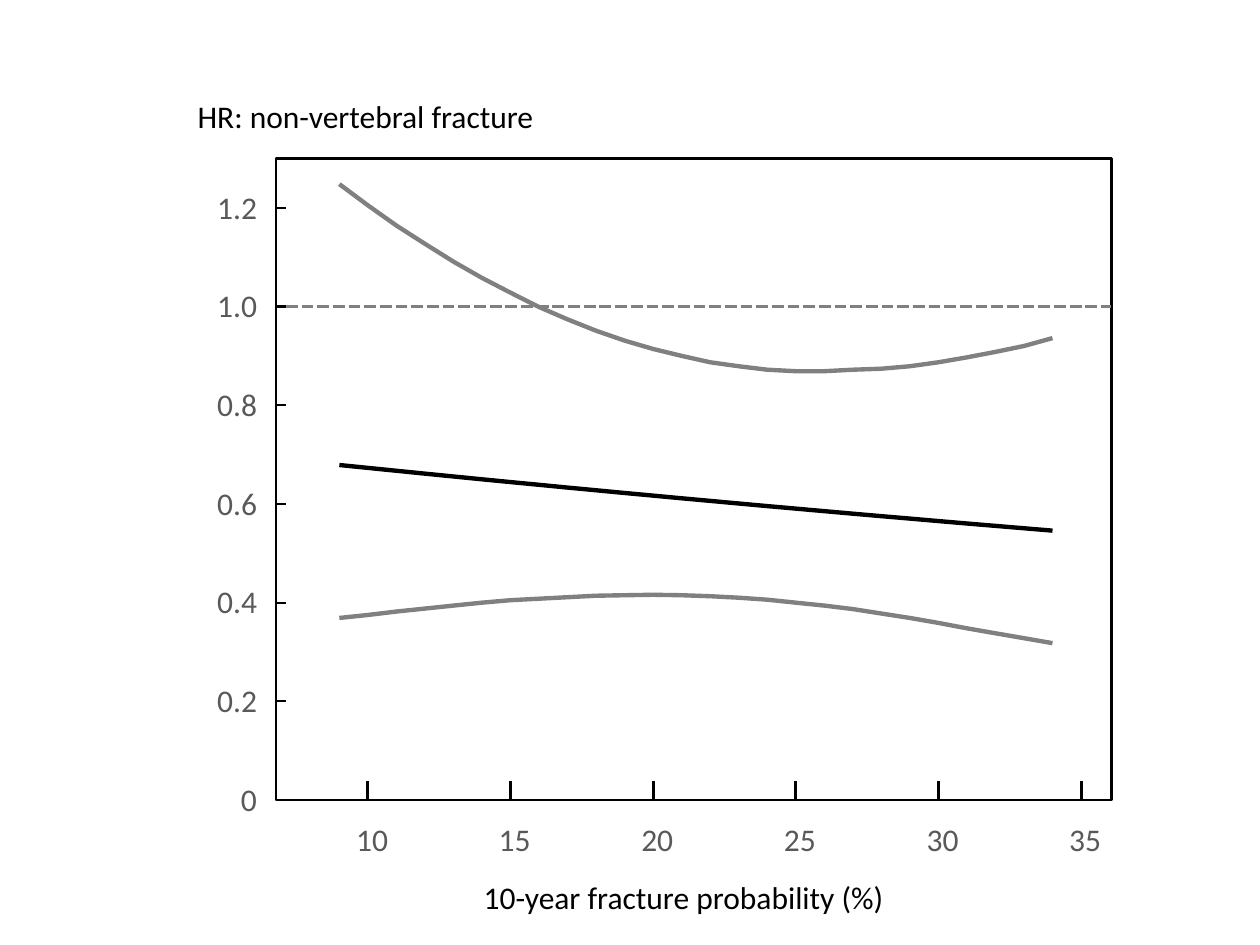
import pptx
import pptx.dml.color
import pptx.enum.dml
import pptx.enum.shapes
import pptx.enum.text
import pptx.oxml.ns
import pptx.util
from lxml import etree
from pptx.util import Inches

ALIGN = pptx.enum.text.PP_ALIGN
INK = {"black": "000000", "gray": "808080", "label": "595959"}
FONT = "Calibri"

# Hazard ratio in percent for each probability from 9 to 34
FIRST, LAST = 9, 34
UPPER = [124.8, 120.5, 116.4, 112.7, 109.1, 105.8, 102.8, 99.9, 97.4,
         95.1, 93.1, 91.4, 90.0, 88.7, 87.9, 87.2, 86.9, 86.9, 87.2,
         87.4, 87.9, 88.7, 89.7, 90.8, 92.0, 93.6]
LOWER = [36.9, 37.5, 38.2, 38.8, 39.4, 40.0, 40.5, 40.8, 41.1,
         41.4, 41.5, 41.6, 41.5, 41.3, 41.0, 40.6, 40.0, 39.4, 38.7,
         37.8, 36.9, 35.9, 34.8, 33.8, 32.8, 31.8]
START, END = 67.9, 54.6
SPAN = LAST - FIRST
# The middle estimate is linear on the log scale
MIDDLE = [START * (END / START) ** (i / SPAN) for i in range(SPAN + 1)]


def rgb(name):
    return pptx.dml.color.RGBColor.from_string(INK[name])


def pen(shape, ink, width):
    shape.line.color.rgb = rgb(ink)
    shape.line.width = pptx.util.Pt(width)


def rule(slide, x1, y1, x2, y2, ink, width):
    line = slide.shapes.add_connector(
        pptx.enum.shapes.MSO_CONNECTOR.STRAIGHT,
        Inches(x1), Inches(y1), Inches(x2), Inches(y2))
    pen(line, ink, width)
    etree.SubElement(line._element.spPr, pptx.oxml.ns.qn("a:effectLst"))
    return line


def write(slide, text, box, ink, align=ALIGN.LEFT, inset=True):
    shape = slide.shapes.add_textbox(*map(Inches, box))
    frame = shape.text_frame
    frame.word_wrap = False
    frame.auto_size = pptx.enum.text.MSO_AUTO_SIZE.SHAPE_TO_FIT_TEXT
    if not inset:
        frame.margin_left = frame.margin_right = 0
        frame.margin_top = frame.margin_bottom = 0
    frame.text = text
    para = frame.paragraphs[0]
    para.alignment = align
    font = para.runs[0].font
    font.name, font.size = FONT, pptx.util.Pt(18)
    font.color.rgb = rgb(ink)


def curve(slide, points, ink):
    spots = [(Inches(x), Inches(y)) for x, y in points]
    pen_path = slide.shapes.build_freeform(*spots[0])
    pen_path.add_line_segments(spots[1:], close=False)
    shape = pen_path.convert_to_shape()
    shape.fill.background()
    shape.shadow.inherit = False
    pen(shape, ink, 2.5)


def plot(slide, left, top, width, height):
    right, base = left + width, top + height

    def across(prob):
        return left + 0.73 + (prob - 10) * 1.132 / 5

    def up(ratio):
        return base - ratio * 3.917

    # Frame
    frame = slide.shapes.add_shape(
        pptx.enum.shapes.MSO_SHAPE.RECTANGLE,
        *map(Inches, (left, top, width, height)))
    frame.fill.background()
    frame.shadow.inherit = False
    pen(frame, "black", 1.5)

    # Vertical axis
    for step in range(7):
        ratio = step / 5
        y = up(ratio)
        rule(slide, left, y, left + 0.08, y, "black", 1.25)
        wide = 0.32 if step else 0.13
        write(slide, f"{ratio:.1f}" if step else "0",
              (left - 0.15 - wide, y - 0.16, wide, 0.3),
              "label", ALIGN.RIGHT, False)

    # Horizontal axis
    for prob in range(10, 36, 5):
        x = across(prob)
        rule(slide, x, base, x, base - 0.15, "black", 1.75)
        write(slide, str(prob), (x - 0.1, base + 0.16, 0.26, 0.3),
              "label", ALIGN.RIGHT, False)

    # No-effect line
    dash = rule(slide, left + 0.08, up(1), right, up(1), "gray", 2.25)
    dash.line.dash_style = pptx.enum.dml.MSO_LINE.SQUARE_DOT

    # Estimate and its bounds
    for values, ink in ((MIDDLE, "black"), (LOWER, "gray"), (UPPER, "gray")):
        curve(slide, [(across(FIRST + i), up(value / 100))
                      for i, value in enumerate(values)], ink)

    # Axis titles
    write(slide, "HR: non-vertebral fracture",
          (left - 0.72, top - 0.54, 2.89, 0.4), "black")
    write(slide, "10-year fracture probability (%)",
          (left + 1.55, base + 0.57, 3.41, 0.4), "black")


def main():
    deck = pptx.Presentation()
    deck.slide_width, deck.slide_height = Inches(10), Inches(7.5)
    slide = deck.slides.add_slide(deck.slide_layouts[6])
    plot(slide, 2.19, 1.26, 6.63, 5.09)
    deck.save("out.pptx")


if __name__ == "__main__":
    main()
